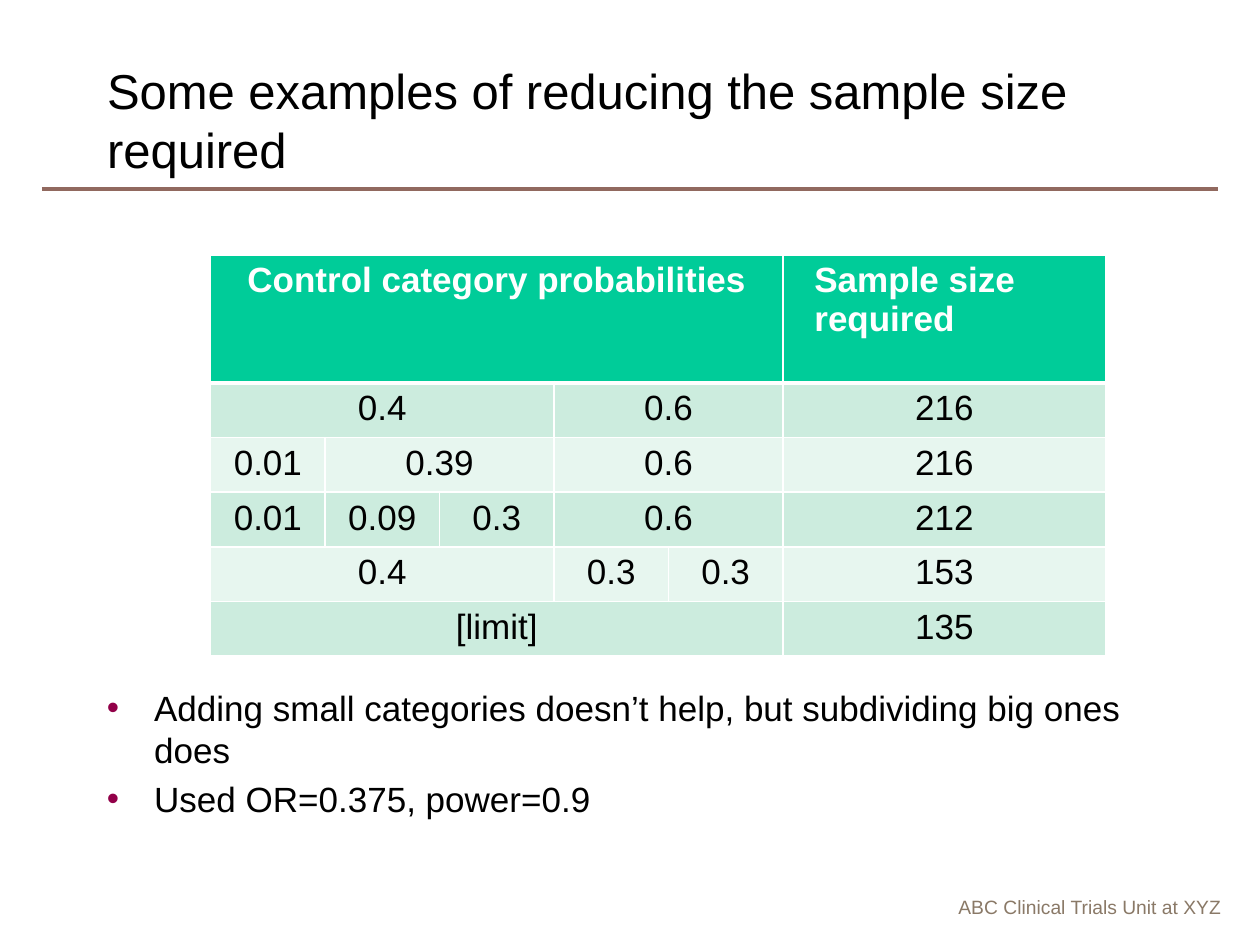
from lxml.etree import SubElement
from pptx import Presentation
from pptx.dml.color import RGBColor
from pptx.enum.shapes import MSO_CONNECTOR
from pptx.enum.text import MSO_ANCHOR, PP_ALIGN
from pptx.oxml import parse_xml
from pptx.oxml.ns import nsdecls, qn
from pptx.util import Pt

FONT = "Arial"
BLACK = RGBColor(0x00, 0x00, 0x00)
WHITE = RGBColor(0xFF, 0xFF, 0xFF)
BROWN = RGBColor(0x91, 0x69, 0x5F)
TAUPE = RGBColor(0x8A, 0x79, 0x67)
PLUM = RGBColor(0x92, 0x00, 0x49)
GREEN = RGBColor(0x00, 0xCC, 0x99)
BANDS = (RGBColor(0xCC, 0xEC, 0xDE), RGBColor(0xE7, 0xF6, 0xEF))

CATEGORY_COLUMNS = 5
CATEGORY_WIDTH = 65.4
SIZE_WIDTH = 184.6
HEADER_HEIGHT = 73.2
ROW_HEIGHT = 29.5
ROWS = [
    [("Control category probabilities", 5), ("Sample size required", 1)],
    [("0.4", 3), ("0.6", 2), ("216", 1)],
    [("0.01", 1), ("0.39", 2), ("0.6", 2), ("216", 1)],
    [("0.01", 1), ("0.09", 1), ("0.3", 1), ("0.6", 2), ("212", 1)],
    [("0.4", 3), ("0.3", 1), ("0.3", 1), ("153", 1)],
    [("[limit]", 5), ("135", 1)],
]
REMARKS = [
    "Adding small categories doesn’t help, but subdividing big ones does",
    "Used OR=0.375, power=0.9",
]


def format_paragraph(paragraph, size, color, alignment=PP_ALIGN.LEFT, bold=False):
    paragraph.alignment = alignment
    for run in paragraph.runs:
        run.font.name = FONT
        run.font.size = Pt(size)
        run.font.color.rgb = color
        run.font.bold = bold


def set_title(slide, text):
    title = slide.shapes.title
    title.left, title.top, title.width, title.height = Pt(54), Pt(36), Pt(616), Pt(64)
    title.text_frame.text = text
    title.text_frame.vertical_anchor = MSO_ANCHOR.MIDDLE
    format_paragraph(title.text_frame.paragraphs[0], 28, BLACK)


def add_rule(slide):
    rule = slide.shapes.add_connector(
        MSO_CONNECTOR.STRAIGHT, Pt(24), Pt(108), Pt(696), Pt(108))
    rule.line.color.rgb = BROWN
    rule.line.width = Pt(1.75)
    SubElement(rule.element.spPr, qn("a:effectLst"))


def add_text_box(slide, lines, left, top, width, height, size, color, alignment):
    box = slide.shapes.add_textbox(Pt(left), Pt(top), Pt(width), Pt(height))
    box.text_frame.word_wrap = True
    box.text_frame.text = "\n".join(lines)
    for paragraph in box.text_frame.paragraphs:
        format_paragraph(paragraph, size, color, alignment)
    return box


def add_bullet(paragraph):
    paragraph.space_before = Pt(4)
    properties = paragraph._p.get_or_add_pPr()
    properties.set("marL", str(Pt(27)))
    properties.set("indent", str(-Pt(27)))
    color = SubElement(properties, qn("a:buClr"))
    SubElement(color, qn("a:srgbClr"), val=str(PLUM))
    SubElement(properties, qn("a:buFont"), typeface=FONT)
    SubElement(properties, qn("a:buChar"), char="•")


def set_borders(cell, top, bottom):
    properties = cell._tc.get_or_add_tcPr()
    widths = {"lnL": 1, "lnR": 1, "lnT": top, "lnB": bottom}
    for position, (side, width) in enumerate(widths.items()):
        properties.insert(position, parse_xml(
            f'<a:{side} {nsdecls("a")} w="{Pt(width)}"><a:solidFill>'
            f'<a:srgbClr val="{WHITE}"/></a:solidFill></a:{side}>'))


def fill_row(table, row, entries):
    header = row == 0
    for column in range(CATEGORY_COLUMNS + 1):
        cell = table.cell(row, column)
        cell.fill.solid()
        cell.fill.fore_color.rgb = GREEN if header else BANDS[(row - 1) % 2]
        set_borders(cell, 3 if row == 1 else 1, 3 if header else 1)
    column = 0
    for text, span in entries:
        cell = table.cell(row, column)
        if span > 1:
            cell.merge(table.cell(row, column + span - 1))
        last = column == CATEGORY_COLUMNS
        if header or last:
            cell.margin_left = cell.margin_right = Pt(18)
        cell.text_frame.text = text
        alignment = PP_ALIGN.LEFT if header and last else PP_ALIGN.CENTER
        format_paragraph(cell.text_frame.paragraphs[0], 20,
                         WHITE if header else BLACK, alignment, header)
        column += span


def add_sample_size_table(slide):
    widths = [CATEGORY_WIDTH] * CATEGORY_COLUMNS + [SIZE_WIDTH]
    heights = [HEADER_HEIGHT] + [ROW_HEIGHT] * (len(ROWS) - 1)
    table = slide.shapes.add_table(
        len(heights), len(widths), Pt(120.4), Pt(145.6),
        Pt(sum(widths)), Pt(sum(heights))).table
    for column, width in zip(table.columns, widths):
        column.width = Pt(width)
    for row, height in zip(table.rows, heights):
        row.height = Pt(height)
    for row, entries in enumerate(ROWS):
        fill_row(table, row, entries)


def main():
    presentation = Presentation()
    presentation.slide_width = Pt(720)
    presentation.slide_height = Pt(540)
    slide = presentation.slides.add_slide(presentation.slide_layouts[5])
    add_rule(slide)
    add_text_box(slide, ["ABC Clinical Trials Unit at XYZ"],
                 465, 508.3, 240, 21, 11, TAUPE, PP_ALIGN.RIGHT)
    set_title(slide, "Some examples of reducing the sample size required")
    remarks = add_text_box(slide, REMARKS, 54, 388.8, 612, 90.7, 20, BLACK, PP_ALIGN.LEFT)
    for paragraph in remarks.text_frame.paragraphs:
        add_bullet(paragraph)
    add_sample_size_table(slide)
    presentation.save("out.pptx")


if __name__ == "__main__":
    main()
